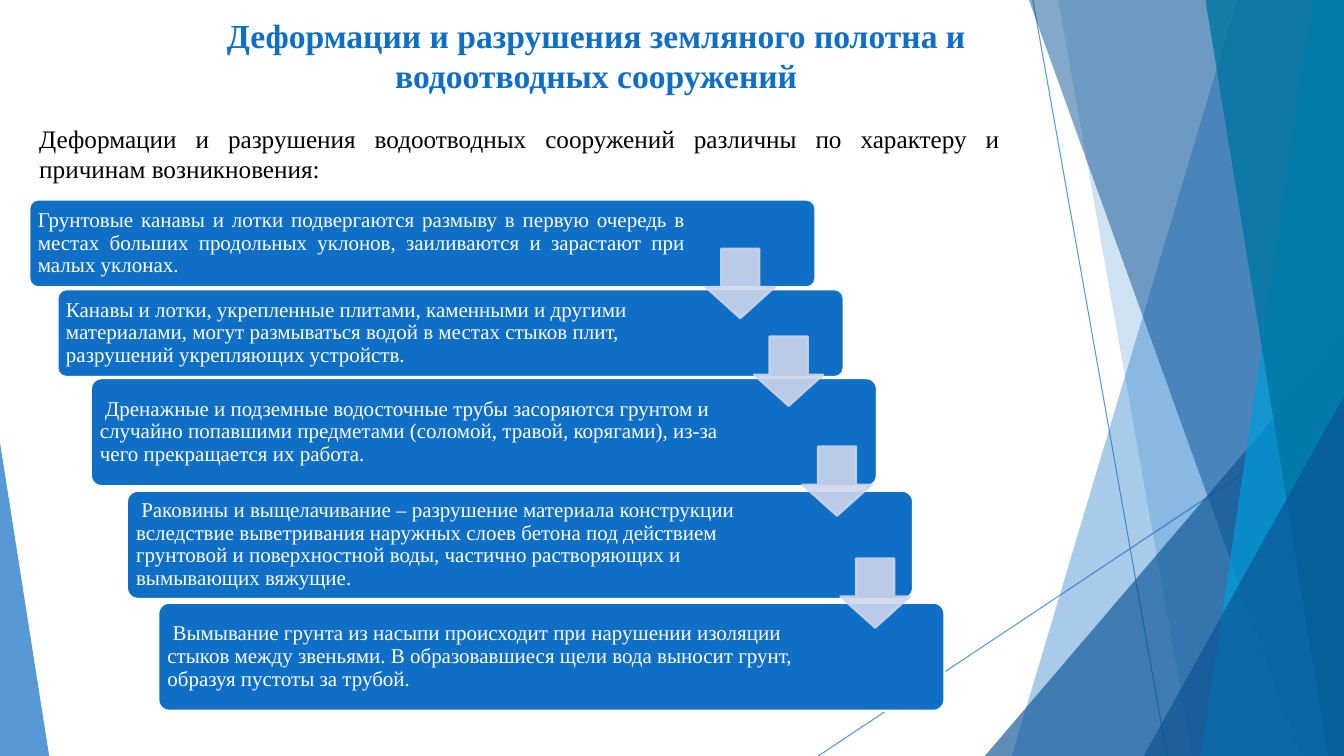
import lxml.etree
import pptx
import pptx.dml.color
import pptx.enum.shapes
import pptx.enum.text
import pptx.oxml.ns
import pptx.util

Cm = pptx.util.Cm
Pt = pptx.util.Pt
Color = pptx.dml.color.RGBColor
Kind = pptx.enum.shapes.MSO_SHAPE
Align = pptx.enum.text.PP_ALIGN
Anchor = pptx.enum.text.MSO_ANCHOR
qn = pptx.oxml.ns.qn

BLUE = Color(0x0F, 0x6F, 0xC6)
NAVY = Color(0x0B, 0x53, 0x94)
SKY = Color(0x00, 0x9D, 0xD9)
TEAL = Color(0x00, 0x76, 0xA3)
PALE = Color(0xCC, 0xD5, 0xEA)
WHITE = Color(0xFF, 0xFF, 0xFF)
BLACK = Color(0, 0, 0)

WIDE, HIGH = 33.87, 19.05

TITLE = "Деформации и разрушения земляного полотна и водоотводных сооружений"
INTRO = ("Деформации и разрушения водоотводных сооружений различны "
         "по характеру и причинам возникновения:")
STEPS = [
    (0, 0, 2.21, Align.JUSTIFY,
     "Грунтовые канавы и лотки подвергаются размыву в первую очередь в местах "
     "больших продольных уклонов, заиливаются и зарастают при малых уклонах."),
    (0.71, 2.26, 2.21, Align.LEFT,
     "Канавы и лотки, укрепленные плитами, каменными и другими материалами, "
     "могут размываться водой в местах стыков плит, разрушений укрепляющих устройств."),
    (1.55, 4.5, 2.72, Align.LEFT,
     " Дренажные и подземные водосточные трубы засоряются грунтом и случайно "
     "попавшими предметами (соломой, травой, корягами), из-за чего прекращается их работа."),
    (2.46, 7.34, 2.72, Align.LEFT,
     " Раковины и выщелачивание – разрушение материала конструкции вследствие "
     "выветривания наружных слоев бетона под действием грунтовой и поверхностной "
     "воды, частично растворяющих и вымывающих вяжущие."),
    (3.25, 10.16, 2.72, Align.LEFT,
     " Вымывание грунта из насыпи происходит при нарушении изоляции стыков между "
     "звеньями. В образовавшиеся щели вода выносит грунт, образуя пустоты за трубой."),
]
ARROWS = [(17.04, 1.24), (18.26, 3.45), (19.48, 6.22), (20.44, 9.04)]


def fade(shape, alpha):
    for tint in shape.element.spPr.iter(qn("a:srgbClr")):
        lxml.etree.SubElement(tint, qn("a:alpha")).set("val", str(alpha * 1000))


def paint(shape, color, alpha=100, edge=None):
    shape.shadow.inherit = False
    shape.fill.solid()
    shape.fill.fore_color.rgb = color
    if edge is None:
        shape.line.fill.background()
    else:
        shape.line.color.rgb = edge
        shape.line.width = Pt(1.5)
    if alpha < 100:
        fade(shape, alpha)


def write(shape, text, size, color, bold=False, align=Align.LEFT,
          anchor=Anchor.TOP, space=1.0, pads=(0.25, 0.13, 0.25, 0.13)):
    frame = shape.text_frame
    frame.word_wrap = True
    frame.vertical_anchor = anchor
    frame.margin_left, frame.margin_top, frame.margin_right, frame.margin_bottom = map(Cm, pads)
    para = frame.paragraphs[0]
    para.alignment = align
    para.line_spacing = space
    run = para.add_run()
    run.text = text
    run.font.name = "Times New Roman"
    run.font.size = Pt(size)
    run.font.bold = bold
    run.font.color.rgb = color


def label(slide, box, text, **form):
    write(slide.shapes.add_textbox(*map(Cm, box)), text, **form)


def ray(slide, start, end):
    line = slide.shapes.add_connector(
        pptx.enum.shapes.MSO_CONNECTOR.STRAIGHT, *map(Cm, start + end))
    line.line.color.rgb = BLUE
    line.line.width = Pt(0.75)
    fade(line, 70)
    lxml.etree.SubElement(line.element.spPr, qn("a:effectLst"))


def band(slide, box, top, base, color, alpha):
    left, head, wide, high = box
    right, foot = left + wide, head + high
    pen = slide.shapes.build_freeform(Cm(left + top), Cm(head))
    pen.add_line_segments([(Cm(right), Cm(head)), (Cm(right), Cm(foot)),
                           (Cm(left + base), Cm(foot))])
    paint(pen.convert_to_shape(), color, alpha)


def wedge(slide, box, tip, color, alpha):
    shape = slide.shapes.add_shape(Kind.ISOSCELES_TRIANGLE, *map(Cm, box))
    shape.adjustments[0] = tip
    paint(shape, color, alpha)


def decor(slide, box):
    left, head, wide, high = box
    right, foot = left + wide, head + high

    def corner(span, rise, alpha=66):
        wedge(slide, (right - span, foot - rise, span, rise), 1, NAVY, alpha)

    ray(slide, (left + 1.22, head), (left + 4.6, foot))
    ray(slide, (right, head + 10.24), (left - 4.19, foot))
    band(slide, box, 6.37, 0.69, BLUE, 36)
    band(slide, box, 1.86, 5.24, BLUE, 20)
    corner(9.05, 10.59)
    band(slide, box, 1.12, 7.98, NAVY, 50)
    band(slide, box, 8.28, 5.46, SKY, 70)
    band(slide, box, 5.57, 8.66, TEAL, 80)
    corner(5.05, 9.07)


def stairs(slide, box):
    left, head, wide, high = box
    span = wide - STEPS[-1][0]
    for dx, dy, rise, align, text in STEPS:
        card = slide.shapes.add_shape(
            Kind.ROUNDED_RECTANGLE, *map(Cm, (left + dx, head + dy, span, rise)))
        card.adjustments[0] = 0.1
        paint(card, BLUE, edge=WHITE)
        gap = 3.07 if align == Align.JUSTIFY else 3.25
        write(card, text, size=15, color=WHITE, align=align, anchor=Anchor.MIDDLE,
              space=0.9, pads=(0.15, 0.15, gap + 0.15, 0.15))
    for dx, dy in ARROWS:
        arrow = slide.shapes.add_shape(
            Kind.DOWN_ARROW, *map(Cm, (left + dx, head + dy, 1.75, 1.75)))
        arrow.adjustments[0] = 0.55
        arrow.adjustments[1] = 0.45
        paint(arrow, PALE, 90, edge=PALE)


def main():
    deck = pptx.Presentation()
    deck.slide_width, deck.slide_height = Cm(WIDE), Cm(HIGH)
    slide = deck.slides.add_slide(deck.slide_layouts[6])
    decor(slide, (24.81, 0, WIDE - 24.81, HIGH))
    wedge(slide, (0, 11.15, 1.24, 7.9), 0, BLUE, 70)
    label(slide, (5.26, 0.25, 19.53, 3.66), TITLE, size=24, color=BLUE,
          bold=True, align=Align.CENTER)
    label(slide, (0.74, 2.97, 24.71, 1.8), INTRO, size=18, color=BLACK,
          align=Align.JUSTIFY)
    stairs(slide, (0.74, 5.03, 23.06, 12.88))
    deck.save("out.pptx")


if __name__ == "__main__":
    main()
